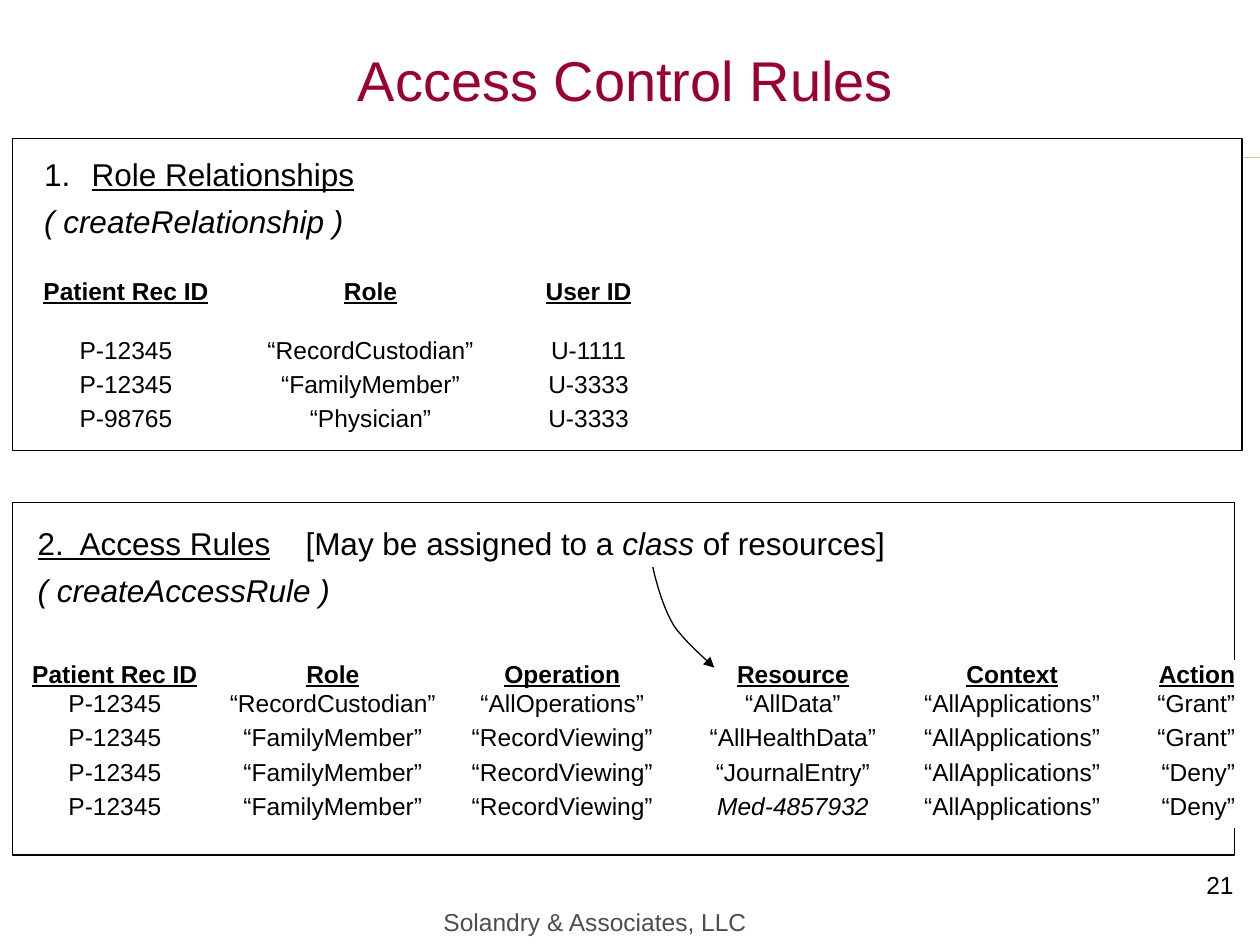
"""Build the Access Control Rules slide."""
from lxml.etree import SubElement
from pptx import Presentation
from pptx.dml.color import RGBColor
from pptx.enum.shapes import MSO_CONNECTOR as Link, MSO_SHAPE as Shape
from pptx.enum.text import MSO_ANCHOR as Anchor, PP_ALIGN as Align
from pptx.oxml.ns import qn
from pptx.util import Cm, Pt


def color(value):
    return RGBColor.from_string(value)


def add_text(left, top, width, height, lines, size=18, ink="000000", align=Align.LEFT):
    box = page.shapes.add_textbox(Cm(left), Cm(top), Cm(width), Cm(height))
    box.text_frame.word_wrap = True
    for index, line in enumerate(lines):
        para = box.text_frame.paragraphs[0] if index == 0 else box.text_frame.add_paragraph()
        para.alignment = align
        para.space_before = Pt(5.5 if index else 0)
        para.font.name, para.font.size = "Arial", Pt(size)
        para.font.color.rgb = color(ink)
        for text, style in line:
            span = para.add_run()
            span.text = text
            span.font.underline = style == "underline"
            span.font.italic = style == "italic"
    return box


deck = Presentation()
deck.slide_width, deck.slide_height = Cm(25.4), Cm(19.05)
page = deck.slides.add_slide(deck.slide_layouts[6])

rule = page.shapes.add_connector(Link.STRAIGHT, Cm(0.64), Cm(3.18), Cm(25.4), Cm(3.18))
rule.line.color.rgb = color("CACCAC")
rule.line.width = Pt(0.75)
SubElement(rule._element.spPr, qn("a:effectLst"))

for top, width, height in [(2.79, 24.79, 6.3), (10.13, 24.64, 7.11)]:
    panel = page.shapes.add_shape(Shape.RECTANGLE, Cm(0.25), Cm(top), Cm(width), Cm(height))
    panel.shadow.inherit = False
    panel.fill.solid()
    panel.fill.fore_color.rgb = color("FFFFFF")
    panel.line.color.rgb = color("000000")
    panel.line.width = Pt(0.75)

title = add_text(0.79, 0, 23.65, 3.18, [[("Access Control Rules", "")]], 32, "990033", Align.CENTER)
title.text_frame.vertical_anchor = Anchor.MIDDLE
add_text(8.69, 18.16, 8.05, 0.9, [[("Solandry & Associates, LLC", "")]], 14, "4D4D4D")
add_text(19.2, 17.42, 5.92, 0.9, [[("21", "")]], 14, align=Align.RIGHT)

relationships = add_text(0.64, 3, 8, 1.98, [
    [("Role Relationships", "underline")], [("( createRelationship )", "italic")]])
for para in relationships.text_frame.paragraphs:
    properties = para._p.get_or_add_pPr()
    properties.set("marL", str(Cm(0.96)))
    properties.set("indent", str(-Cm(0.96)))
numbered = relationships.text_frame.paragraphs[0]._p.get_or_add_pPr()
SubElement(numbered, qn("a:buFont"), typeface="Arial")
SubElement(numbered, qn("a:buAutoNum"), type="arabicPeriod")

add_text(0.51, 10.44, 6.6, 1.98, [
    [("2.  Access Rules", "underline")], [("( createAccessRule )", "italic")]])
add_text(5.91, 10.44, 13, 1.1, [
    [("[May be assigned to a ", ""), ("class", "italic"), (" of resources]", "")]])

role_rows = [
    ["Patient Rec ID", "Role", "User ID"],
    ["P-12345", "“RecordCustodian”", "U-1111"],
    ["P-12345", "“FamilyMember”", "U-3333"],
    ["P-98765", "“Physician”", "U-3333"],
]
access_rows = [
    ["Patient Rec ID", "Role", "Operation", "Resource", "Context", "Action"],
    ["P-12345", "“RecordCustodian”", "“AllOperations”", "“AllData”", "“AllApplications”", "“Grant”"],
    ["P-12345", "“FamilyMember”", "“RecordViewing”", "“AllHealthData”", "“AllApplications”", "“Grant”"],
    ["P-12345", "“FamilyMember”", "“RecordViewing”", "“JournalEntry”", "“AllApplications”", "“Deny”"],
    ["P-12345", "“FamilyMember”", "“RecordViewing”", "Med-4857932", "“AllApplications”", "“Deny”"],
]
tables = [
    (0.76, 5.6, 1.19, [3.56, 6.3, 2.49], role_rows),
    (0.46, 13.32, 0.6, [3.71, 5.08, 4.17, 5.13, 3.71, 2.64], access_rows),
]
for left, top, header_height, widths, rows in tables:
    height = header_height + 0.69 * (len(rows) - 1)
    table = page.shapes.add_table(
        len(rows), len(widths), Cm(left), Cm(top), Cm(sum(widths)), Cm(height)).table
    table.first_row = table.horz_banding = False
    for column, width in zip(table.columns, widths):
        column.width = Cm(width)
    for row, texts in enumerate(rows):
        table.rows[row].height = Cm(0.69 if row else header_height)
        for column, text in enumerate(texts):
            cell = table.cell(row, column)
            cell.fill.background()
            cell.margin_left = cell.margin_right = cell.margin_top = cell.margin_bottom = 0
            cell.text = text
            para = cell.text_frame.paragraphs[0]
            para.alignment = Align.RIGHT if column == 5 else Align.CENTER
            para.font.name, para.font.size = "Arial", Pt(14)
            para.font.color.rgb = color("000000")
            para.font.bold = para.font.underline = row == 0
            para.font.italic = text.startswith("Med-")

curves = [
    [(13.16, 11.43), (13.26, 11.86), (13.39, 12.29), (13.59, 12.62)],
    [(13.59, 12.62), (13.82, 12.95), (14.25, 13.31), (14.4, 13.46)],
]
points = []
for curve in curves:
    for step in range(1, 11):
        t = step / 10
        weights = [(1 - t) ** 3, 3 * t * (1 - t) ** 2, 3 * t ** 2 * (1 - t), t ** 3]
        points.append([Cm(sum(w * p[axis] for w, p in zip(weights, curve))) for axis in (0, 1)])
builder = page.shapes.build_freeform(Cm(13.16), Cm(11.43))
builder.add_line_segments(points, close=False)
arrow = builder.convert_to_shape()
arrow.shadow.inherit = False
arrow.fill.background()
arrow.line.color.rgb = color("000000")
arrow.line.width = Pt(0.75)
SubElement(arrow.line._get_or_add_ln(), qn("a:tailEnd"), type="triangle")

deck.save("out.pptx")
